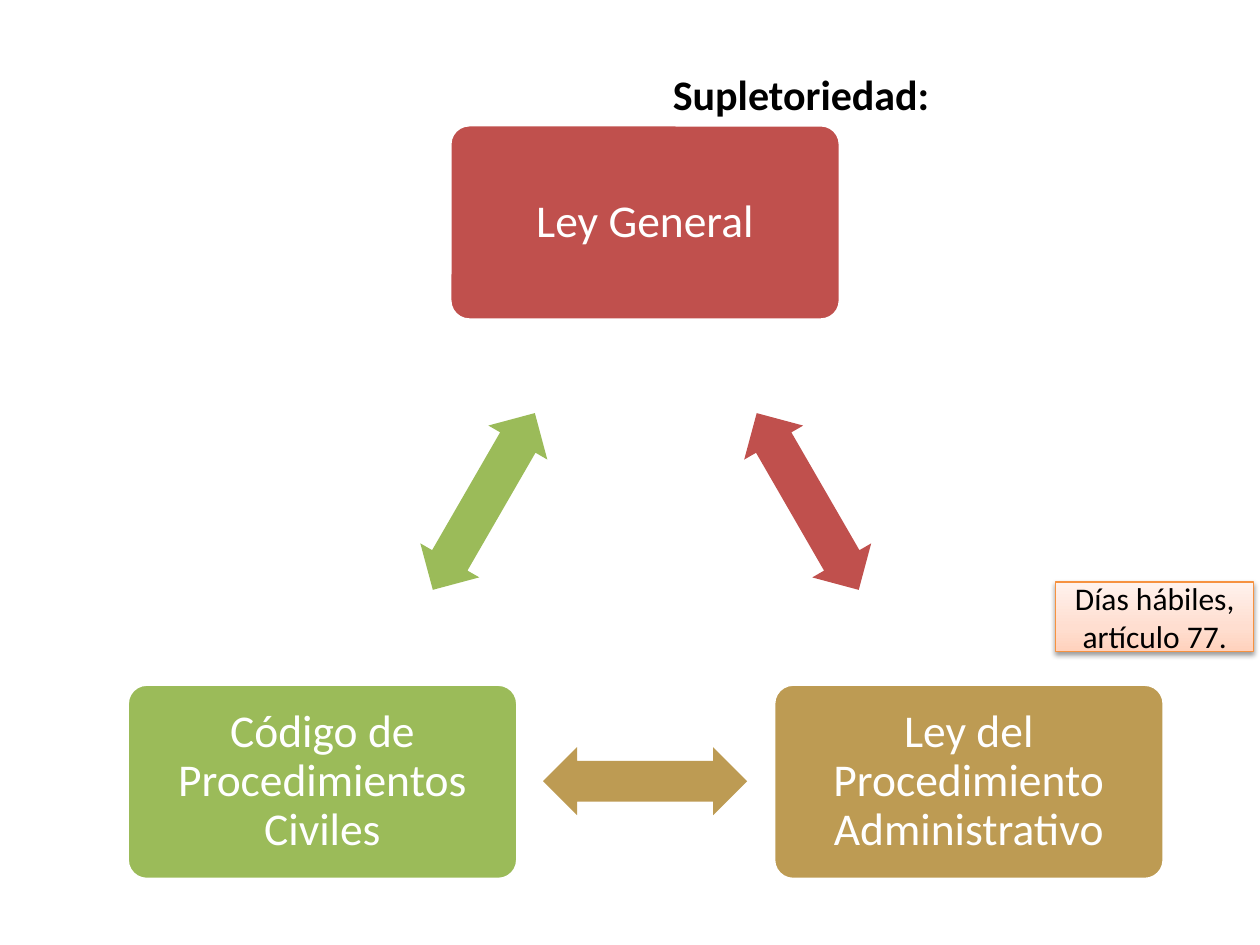
from lxml.etree import SubElement
from pptx import Presentation
from pptx.dml.color import RGBColor
from pptx.enum.shapes import MSO_SHAPE
from pptx.enum.text import MSO_ANCHOR, PP_ALIGN
from pptx.oxml.ns import qn
from pptx.util import Inches, Pt

RED = RGBColor(0xC0, 0x50, 0x4D)
GOLD = RGBColor(0xBD, 0x9B, 0x53)
GREEN = RGBColor(0x9B, 0xBB, 0x59)
ORANGE = RGBColor(0xF6, 0x92, 0x40)
WHITE = RGBColor(0xFF, 0xFF, 0xFF)
BLACK = RGBColor(0, 0, 0)
NOTE_STOPS = [(0, "FFD2BD"), (35, "FFDED0"), (100, "FFF2ED")]


def add_shape(kind, left, top, width, height):
    sp = s.shapes.add_shape(kind, Inches(left), Inches(top), Inches(width), Inches(height))
    sp.shadow.inherit = False
    return sp


def format_text(p, size, color, bold=False):
    for r in p.runs:
        r.font.name = "Calibri"
        r.font.size = Pt(size)
        r.font.bold = bold
        r.font.color.rgb = color


prs = Presentation()
prs.slide_width, prs.slide_height = Inches(10), Inches(7.5)
s = prs.slides.add_slide(prs.slide_layouts[4])

# Heading: the right-hand text placeholder of the comparison layout
for ph in list(s.placeholders):
    if ph.placeholder_format.idx != 3:
        ph.element.getparent().remove(ph.element)
heading = s.placeholders[3]
heading.left, heading.top = Inches(5.24), Inches(0.29)
heading.width, heading.height = Inches(4.42), Inches(0.7)
tf = heading.text_frame
tf.text = "Supletoriedad:"
tf.vertical_anchor = MSO_ANCHOR.BOTTOM
format_text(tf.paragraphs[0], 24, BLACK, bold=True)

# Triangle of laws, each with the arrow that leads to the next one
BOX_W, BOX_H = 3.1, 1.55
ARROW_W, ARROW_H = 1.62, 0.54
laws = [
    ("Ley General", RED, (3.57, 0.99), (5.6, 3.71), 60),
    ("Ley del Procedimiento Administrativo", GOLD, (6.14, 5.43), (4.31, 5.93), 180),
    ("Código de Procedimientos Civiles", GREEN, (1.01, 5.43), (3.03, 3.71), 300),
]
for name, color, box_at, arrow_at, angle in laws:
    box = add_shape(MSO_SHAPE.ROUNDED_RECTANGLE, *box_at, BOX_W, BOX_H)
    box.adjustments[0] = 0.1
    box.fill.solid()
    box.fill.fore_color.rgb = color
    box.line.color.rgb = WHITE
    box.line.width = Pt(2)
    tf = box.text_frame
    tf.word_wrap = True
    tf.vertical_anchor = MSO_ANCHOR.MIDDLE
    tf.margin_left = tf.margin_right = tf.margin_top = tf.margin_bottom = Inches(0.11)
    tf.text = name
    p = tf.paragraphs[0]
    p.alignment = PP_ALIGN.CENTER
    p.line_spacing = 0.9
    format_text(p, 26, WHITE)

    arrow = add_shape(MSO_SHAPE.LEFT_RIGHT_ARROW, *arrow_at, ARROW_W, ARROW_H)
    arrow.adjustments[0], arrow.adjustments[1] = 0.6, 0.5
    arrow.rotation = angle
    arrow.fill.solid()
    arrow.fill.fore_color.rgb = color
    arrow.line.fill.background()

# Note with a three-stop gradient and a soft shadow
note = add_shape(MSO_SHAPE.RECTANGLE, 8.38, 4.62, 1.57, 0.55)
note.fill.gradient()
note.fill.gradient_angle = 90
stops = note.element.spPr.find(qn("a:gradFill")).find(qn("a:gsLst"))
for stop in list(stops):
    stops.remove(stop)
for pos, color in NOTE_STOPS:
    stop = SubElement(stops, qn("a:gs"), pos=str(pos * 1000))
    SubElement(stop, qn("a:srgbClr"), val=color)
note.line.color.rgb = ORANGE
note.line.width = Pt(0.75)
effects = note.element.spPr.find(qn("a:effectLst"))
shadow = SubElement(effects, qn("a:outerShdw"), blurRad=str(Pt(3.1)), dist=str(Pt(1.6)),
                    dir="5400000", rotWithShape="0")
SubElement(SubElement(shadow, qn("a:srgbClr"), val="000000"), qn("a:alpha"), val="38000")
tf = note.text_frame
tf.word_wrap = True
tf.vertical_anchor = MSO_ANCHOR.MIDDLE
tf.text = "Días hábiles, artículo 77."
tf.paragraphs[0].alignment = PP_ALIGN.CENTER
format_text(tf.paragraphs[0], 18, BLACK)

prs.save("out.pptx")
